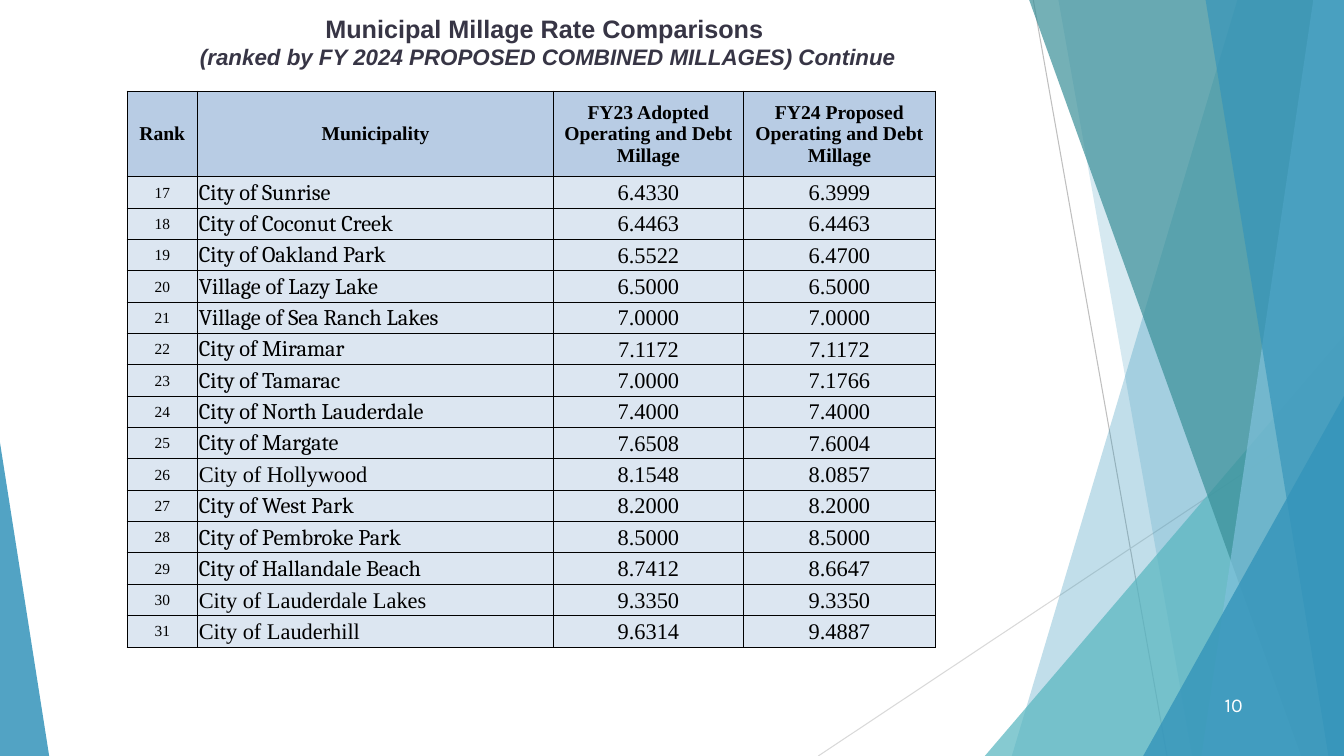
from dataclasses import dataclass

from lxml.etree import SubElement
from pptx import Presentation
from pptx.dml.color import RGBColor
from pptx.enum.shapes import MSO_CONNECTOR as Connector, MSO_SHAPE as Preset
from pptx.enum.text import MSO_ANCHOR as Anchor, PP_ALIGN as Align
from pptx.oxml.ns import qn
from pptx.util import Cm, Pt


@dataclass(frozen=True)
class Theme:
    blue: str = "3494BA"
    teal: str = "58B6C0"
    dark_teal: str = "3A8F98"
    light_blue: str = "7FC1DB"
    gray: str = "BFBFBF"
    light_gray: str = "D9D9D9"
    title: str = "373545"
    black: str = "000000"
    white: str = "FFFFFF"
    header: str = "B8CCE4"
    body: str = "DCE6F1"
    sans: str = "Arial"
    serif: str = "Times New Roman"
    name_serif: str = "Cambria"
    number_font: str = "Karla"
    title_size: int = 18
    body_size: int = 16
    header_size: int = 14
    rank_size: int = 11


THEME = Theme()
WIDTH, HEIGHT, BLEED = 33.87, 19.05, -0.02
COLUMN_WIDTHS = [1.78, 8.97, 4.78, 4.85]
HEADER_HEIGHT, ROW_HEIGHT = 2.16, 0.79
FIRST_RANK = 17
HEADINGS = [
    "Rank",
    "Municipality",
    "FY23 Adopted Operating and Debt Millage",
    "FY24 Proposed Operating and Debt Millage",
]
MILLAGES = [
    ("City of Sunrise", "6.4330", "6.3999"),
    ("City of Coconut Creek", "6.4463", "6.4463"),
    ("City of Oakland Park", "6.5522", "6.4700"),
    ("Village of Lazy Lake", "6.5000", "6.5000"),
    ("Village of Sea Ranch Lakes", "7.0000", "7.0000"),
    ("City of Miramar", "7.1172", "7.1172"),
    ("City of Tamarac", "7.0000", "7.1766"),
    ("City of North Lauderdale", "7.4000", "7.4000"),
    ("City of Margate", "7.6508", "7.6004"),
    ("City of Hollywood", "8.1548", "8.0857"),
    ("City of West Park", "8.2000", "8.2000"),
    ("City of Pembroke Park", "8.5000", "8.5000"),
    ("City of Hallandale Beach", "8.7412", "8.6647"),
    ("City of Lauderdale Lakes", "9.3350", "9.3350"),
    ("City of Lauderhill", "9.6314", "9.4887"),
]
TIMES_NAMES = {"City of Hollywood", "City of Lauderdale Lakes", "City of Lauderhill"}


def add_line(page, start, end, color):
    line = page.shapes.add_connector(
        Connector.STRAIGHT, *(Cm(value) for value in (*start, *end))
    )
    line.line.color.rgb = RGBColor.from_string(color)
    line.line.width = Pt(0.75)
    SubElement(line.element.spPr, qn("a:effectLst"))


def paint(shape, color, opacity):
    shape.shadow.inherit = False
    shape.line.fill.background()
    shape.fill.solid()
    shape.fill.fore_color.rgb = RGBColor.from_string(color)
    tint = shape.element.spPr.find(".//" + qn("a:srgbClr"))
    SubElement(tint, qn("a:alpha")).set("val", str(opacity * 1000))


def add_facet(page, top_left, bottom_left, color, opacity):
    corners = [(WIDTH, BLEED), (WIDTH, HEIGHT), (bottom_left, HEIGHT)]
    outline = page.shapes.build_freeform(Cm(top_left), Cm(BLEED))
    outline.add_line_segments([(Cm(x), Cm(y)) for x, y in corners])
    paint(outline.convert_to_shape(), color, opacity)


def add_triangle(page, left, top, width, apex, color, opacity):
    triangle = page.shapes.add_shape(
        Preset.ISOSCELES_TRIANGLE, Cm(left), Cm(top), Cm(width), Cm(HEIGHT - top)
    )
    triangle.adjustments[0] = apex
    paint(triangle, color, opacity)


def add_span(para, text, size, font, color, bold=False, italic=False):
    span = para.add_run()
    span.text = text
    span.font.size = Pt(size)
    span.font.name = font
    span.font.bold = bold
    span.font.italic = italic
    span.font.color.rgb = RGBColor.from_string(color)


def add_text_box(page, left, top, width, height, anchor):
    box = page.shapes.add_textbox(Cm(left), Cm(top), Cm(width), Cm(height))
    box.text_frame.word_wrap = True
    box.text_frame.vertical_anchor = anchor
    return box.text_frame


def add_title(page):
    frame = add_text_box(page, 2.9, 0.2, 21.82, 1.7, Anchor.TOP)
    heading, subtitle = frame.paragraphs[0], frame.add_paragraph()
    heading.alignment = subtitle.alignment = Align.CENTER
    add_span(heading, "Municipal Millage Rate Comparisons ",
             THEME.title_size, THEME.sans, THEME.title, bold=True)
    add_span(subtitle, "(ranked by FY 2024 PROPOSED COMBINED MILLAGES) Continue",
             THEME.body_size, THEME.sans, THEME.title, bold=True, italic=True)


def add_page_number(page):
    para = add_text_box(page, 29.67, 17.25, 1.9, 1.02, Anchor.MIDDLE).paragraphs[0]
    para.alignment = Align.RIGHT
    add_span(para, "10", THEME.header_size, THEME.number_font, THEME.white)


def add_borders(cell):
    properties = cell._tc.get_or_add_tcPr()
    for side in ("lnL", "lnR", "lnT", "lnB"):
        border = SubElement(properties, qn(f"a:{side}"), w=str(Pt(0.5)))
        fill = SubElement(border, qn("a:solidFill"))
        SubElement(fill, qn("a:srgbClr"), val=THEME.black)


def fill_cell(cell, text, size, font, fill, bold=False, align=Align.CENTER):
    add_borders(cell)
    cell.fill.solid()
    cell.fill.fore_color.rgb = RGBColor.from_string(fill)
    cell.margin_left = cell.margin_right = cell.margin_top = Cm(0.03)
    cell.margin_bottom = 0
    cell.vertical_anchor = Anchor.MIDDLE
    para = cell.text_frame.paragraphs[0]
    para.alignment = align
    add_span(para, text, size, font, THEME.black, bold=bold)


def add_millage_table(page):
    height = HEADER_HEIGHT + ROW_HEIGHT * len(MILLAGES)
    table = page.shapes.add_table(
        len(MILLAGES) + 1, len(HEADINGS),
        Cm(3.2), Cm(2.29), Cm(sum(COLUMN_WIDTHS)), Cm(height),
    ).table
    table.horz_banding = False
    for column, width in zip(table.columns, COLUMN_WIDTHS):
        column.width = Cm(width)
    for index, row in enumerate(table.rows):
        row.height = Cm(ROW_HEIGHT if index else HEADER_HEIGHT)
    for column, heading in enumerate(HEADINGS):
        fill_cell(table.cell(0, column), heading, THEME.header_size,
                  THEME.serif, THEME.header, bold=True)
    for row, (name, *rates) in enumerate(MILLAGES, start=1):
        fill_cell(table.cell(row, 0), str(FIRST_RANK + row - 1),
                  THEME.rank_size, THEME.serif, THEME.body)
        name_font = THEME.serif if name in TIMES_NAMES else THEME.name_serif
        fill_cell(table.cell(row, 1), name, THEME.body_size,
                  name_font, THEME.body, align=Align.LEFT)
        for column, rate in enumerate(rates, start=2):
            fill_cell(table.cell(row, column), rate, THEME.body_size,
                      THEME.serif, THEME.body)


def add_backdrop(page):
    add_line(page, (26.04, 0), (29.41, HEIGHT), THEME.gray)
    add_line(page, (WIDTH, 10.24), (20.62, HEIGHT), THEME.light_gray)
    add_facet(page, 31.19, 25.5, THEME.blue, 30)
    add_facet(page, 26.67, 30.05, THEME.blue, 20)
    add_triangle(page, 24.82, 8.46, 9.05, 1, THEME.teal, 72)
    add_facet(page, 25.93, 32.79, THEME.dark_teal, 70)
    add_facet(page, 33.1, 30.28, THEME.light_blue, 70)
    add_facet(page, 30.38, 33.48, THEME.blue, 65)
    add_triangle(page, 28.81, 9.98, 5.06, 1, THEME.blue, 80)
    add_triangle(page, 0, 11.15, 1.24, 0, THEME.blue, 85)


def main():
    deck = Presentation()
    deck.slide_width, deck.slide_height = Cm(WIDTH), Cm(HEIGHT)
    page = deck.slides.add_slide(deck.slide_layouts[6])
    add_backdrop(page)
    add_title(page)
    add_page_number(page)
    add_millage_table(page)
    deck.save("out.pptx")


if __name__ == "__main__":
    main()
